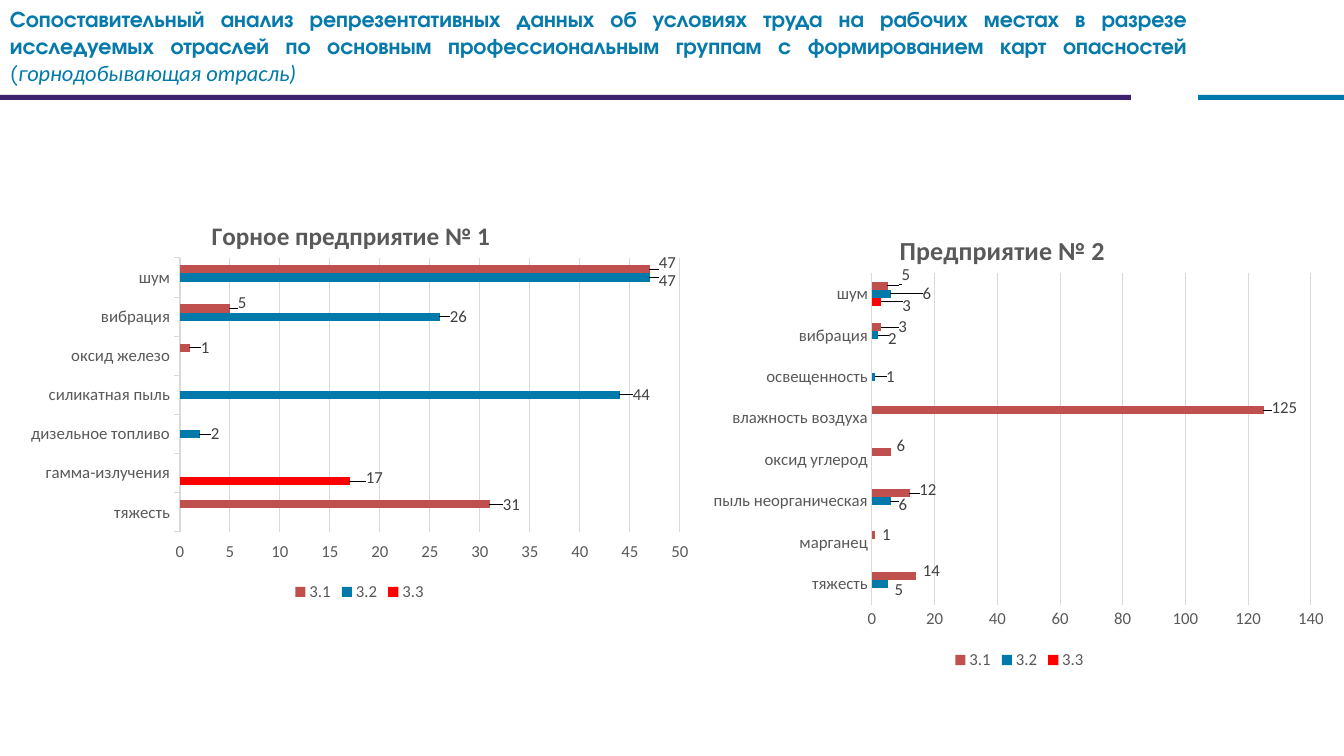
from lxml import etree
from pptx import Presentation
from pptx.chart.data import CategoryChartData
from pptx.dml.color import RGBColor
from pptx.enum.chart import XL_CHART_TYPE as ChartType
from pptx.enum.chart import XL_LABEL_POSITION as LabelPosition
from pptx.enum.chart import XL_LEGEND_POSITION as LegendPosition
from pptx.enum.chart import XL_TICK_MARK as TickMark
from pptx.enum.shapes import MSO_SHAPE as Shape
from pptx.enum.text import PP_ALIGN as Align
from pptx.oxml.ns import qn
from pptx.util import Pt

SCALE = 914400 / 100.8
BLUE = RGBColor(0x00, 0x7A, 0xAB)
HEADING = RGBColor(0x05, 0x7A, 0xAB)
PURPLE = RGBColor(0x3E, 0x22, 0x6F)
RED = RGBColor(0xFF, 0x00, 0x00)
BRICK = RGBColor(0xC0, 0x50, 0x4D)
GRID = RGBColor(0xD9, 0xD9, 0xD9)
GREY = RGBColor(0x59, 0x59, 0x59)
DARK = RGBColor(0x40, 0x40, 0x40)
SERIES_COLORS = {"3.3": RED, "3.2": BLUE, "3.1": BRICK}

MINING_A = {
    "title": "Горное предприятие № 1", "title_size": 18, "title_at": (189, 18),
    "plot": (162, 62, 500, 274), "gap": 182, "top": 50, "step": 5,
    "tick": TickMark.OUTSIDE,
    "categories": ["тяжесть", "гамма-излучения", "дизельное топливо",
                   "силикатная пыль", "оксид железо", "вибрация", "шум"],
    "series": {
        "3.3": {1: (17, 12, -4)},
        "3.2": {2: (2, 7, 0), 3: (44, 9, 0), 5: (26, 6, 0), 6: (47, 5, 3)},
        "3.1": {0: (31, 9, 0), 4: (1, 7, 0), 5: (5, 4, -6), 6: (47, 5, -7)},
    },
}
MINING_B = {
    "title": "Предприятие № 2", "title_size": 18.6, "title_at": (193, 21),
    "plot": (170, 67, 439, 332), "gap": 219, "top": 140, "step": 20,
    "tick": TickMark.NONE,
    "categories": ["тяжесть", "марганец", "пыль неорганическая",
                   "оксид углерод", "влажность воздуха", "освещенность",
                   "вибрация", "шум"],
    "series": {
        "3.3": {7: (3, 17, 4)},
        "3.2": {0: (5, 3, 6), 2: (6, 4, 4), 5: (1, 7, 0),
                6: (2, 6, 4), 7: (6, 28, 0)},
        "3.1": {0: (14, 3, -5), 1: (1, 3, 0), 2: (12, 6, -4),
                3: (6, 2, -6), 4: (125, 4, -3), 6: (3, 13, 0),
                7: (5, 10, -11)},
    },
}


def emu(*lengths):
    return [round(length * SCALE) for length in lengths]


def style_font(font, size, color, name="Calibri", bold=False, italic=False):
    font.size, font.name = Pt(size), name
    font.bold, font.italic = bold, italic
    font.color.rgb = color


def make_layout(**values):
    layout = etree.Element(qn("c:layout"))
    manual = etree.SubElement(layout, qn("c:manualLayout"))
    for tag, value in values.items():
        etree.SubElement(manual, qn(f"c:{tag}")).set("val", str(value))
    return layout


def place_after(anchor, layout):
    for old in anchor.getparent().findall(qn("c:layout")):
        old.getparent().remove(old)
    anchor.addnext(layout)


def add_heading(page, box):
    frame = page.shapes.add_textbox(*emu(*box)).text_frame
    frame.word_wrap = True
    para = frame.paragraphs[0]
    para.alignment = Align.JUSTIFY
    heading = ("Сопоставительный анализ репрезентативных данных об условиях "
               "труда на рабочих местах в разрезе исследуемых отраслей по "
               "основным профессиональным группам с формированием карт "
               "опасностей ")
    for text, font_name, color, bold in (
            (heading, "TeX Gyre Adventor", HEADING, True),
            ("(", "TeX Gyre Adventor", HEADING, False),
            ("горнодобывающая отрасль)", "Calibri", BLUE, False)):
        span = para.add_run()
        span.text = text
        style_font(span.font, 16, color, font_name, bold, not bold)


def add_rule(page, box):
    left, top, width, height = box
    for start, end, color in ((0, 1131, PURPLE), (1198, width, BLUE)):
        bar = page.shapes.add_shape(
            Shape.RECTANGLE, *emu(left + start, top, end - start, height))
        bar.shadow.inherit = False
        bar.fill.solid()
        bar.fill.fore_color.rgb = color
        bar.line.fill.background()


def style_axes(chart, facts):
    category, value = chart.category_axis, chart.value_axis
    for axis in (category, value):
        style_font(axis.tick_labels.font, 12, GREY)
        axis.minor_tick_mark = TickMark.NONE
        axis.major_tick_mark = facts["tick"]
    category.format.line.color.rgb = GRID
    category.format.line.width = Pt(0.75)
    value.format.line.fill.background()
    value.minimum_scale, value.maximum_scale = 0, facts["top"]
    value.major_unit = facts["step"]
    value.has_major_gridlines = True
    value.major_gridlines.format.line.color.rgb = GRID
    value.major_gridlines.format.line.width = Pt(0.75)


def style_series(series, points, width, height):
    series.format.fill.solid()
    series.format.fill.fore_color.rgb = SERIES_COLORS[series.name]
    labels = series.data_labels
    labels.show_value = True
    labels.position = LabelPosition.OUTSIDE_END
    style_font(labels.font, 12, DARK)
    for index, (_, shift_x, shift_y) in points.items():
        label = series.points[index].data_label
        label.position = LabelPosition.OUTSIDE_END
        style_font(label.font, 12, DARK)
        node = series._element.xpath(
            f"c:dLbls/c:dLbl/c:idx[@val='{index}']")[0]
        place_after(node, make_layout(x=round(shift_x / width, 4),
                                      y=round(shift_y / height, 4)))


def add_hazard_chart(page, box, facts):
    width, height = box[2:]
    data = CategoryChartData()
    data.categories = facts["categories"]
    for name, points in facts["series"].items():
        data.add_series(name, [points[index][0] if index in points else None
                               for index in range(len(facts["categories"]))])
    chart = page.shapes.add_chart(
        ChartType.BAR_CLUSTERED, *emu(*box), data).chart
    chart.font.size, chart.font.name = Pt(10), "Calibri"
    style_axes(chart, facts)
    plot = chart.plots[0]
    plot.gap_width, plot.overlap = facts["gap"], 0
    plot.vary_by_categories = False
    for series in plot.series:
        style_series(series, facts["series"][series.name], width, height)

    chart.has_title = True
    title = chart.chart_title
    span = title.text_frame.paragraphs[0].add_run()
    span.text = facts["title"]
    style_font(span.font, facts["title_size"], GREY, bold=True)
    title.include_in_layout = False
    left, top = facts["title_at"]
    place_after(title._element.find(qn("c:tx")), make_layout(
        xMode="edge", yMode="edge",
        x=round(left / width, 4), y=round(top / height, 4)))

    left, top, plot_width, plot_height = facts["plot"]
    area = chart._chartSpace.find(f".//{qn('c:plotArea')}")
    for old in area.findall(qn("c:layout")):
        area.remove(old)
    area.insert(0, make_layout(
        layoutTarget="inner", xMode="edge", yMode="edge",
        x=round(left / width, 4), y=round(top / height, 4),
        w=round(plot_width / width, 4), h=round(plot_height / height, 4)))

    chart.has_legend = True
    chart.legend.position = LegendPosition.BOTTOM
    chart.legend.include_in_layout = False
    style_font(chart.legend.font, 12, GREY)


def main():
    deck = Presentation()
    deck.slide_width, deck.slide_height = emu(1344, 756)
    page = deck.slides.add_slide(deck.slide_layouts[6])
    add_hazard_chart(page, (18, 196, 683, 410), MINING_A)
    add_hazard_chart(page, (702, 206, 635, 468), MINING_B)
    add_heading(page, (0, 0, 1198, 146))
    add_rule(page, (0, 95, 1344, 5))
    deck.save("out.pptx")


if __name__ == "__main__":
    main()
